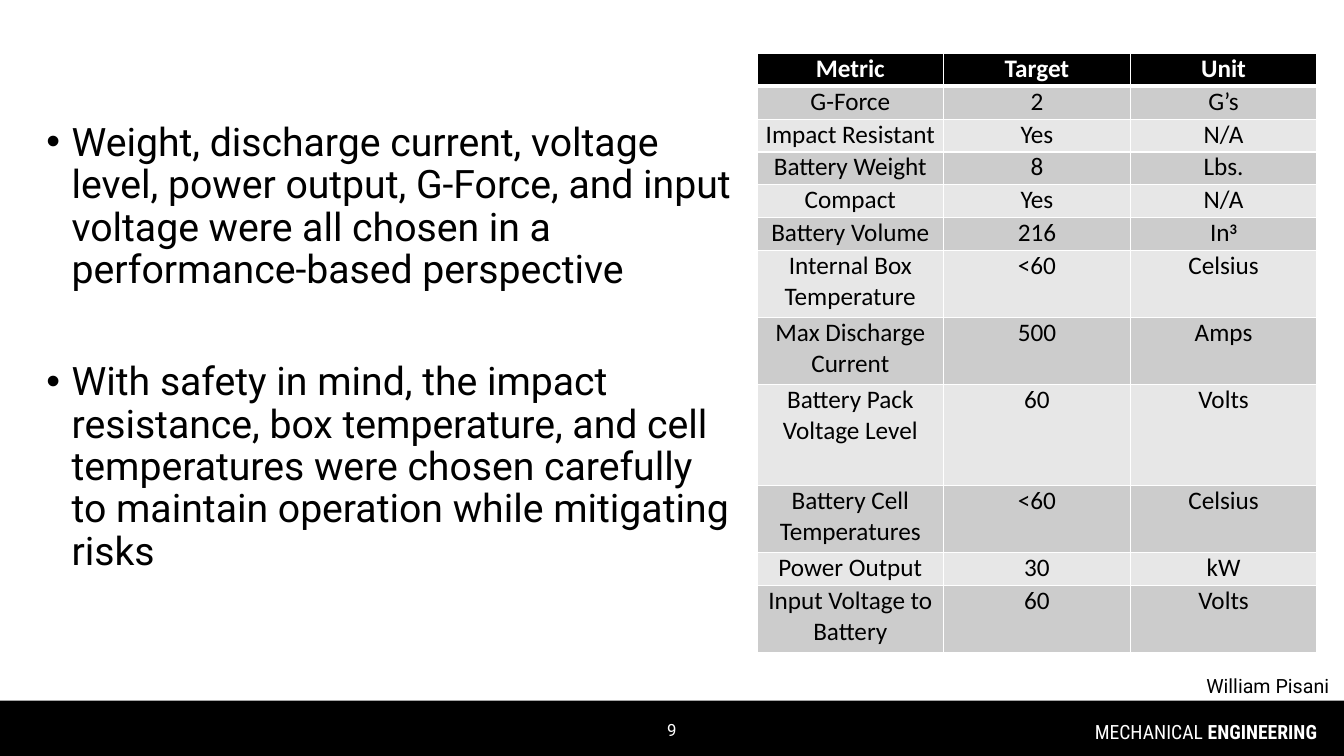
from lxml.etree import SubElement
from pptx import Presentation
from pptx.dml.color import RGBColor
from pptx.enum.shapes import MSO_SHAPE as Shape
from pptx.enum.text import MSO_ANCHOR as Anchor, PP_ALIGN as Align
from pptx.oxml.ns import qn
from pptx.util import Pt

POINTS = [
    "Weight, discharge current, voltage level, power output, G-Force, and input "
    "voltage were all chosen in a performance-based perspective",
    "With safety in mind, the impact resistance, box temperature, and cell temperatures "
    "were chosen carefully to maintain operation while mitigating risks",
]
METRICS = [
    ("Metric", "Target", "Unit", 1),
    ("G-Force", "2", "G’s", 1),
    ("Impact Resistant", "Yes", "N/A", 1),
    ("Battery Weight", "8", "Lbs.", 1),
    ("Compact", "Yes", "N/A", 1),
    ("Battery Volume", "216", "In^3", 1),
    ("Internal Box Temperature", "<60", "Celsius", 2),
    ("Max Discharge Current", "500", "Amps", 2),
    ("Battery Pack Voltage Level", "60", "Volts", 3),
    ("Battery Cell Temperatures", "<60", "Celsius", 2),
    ("Power Output", "30", "kW", 1),
    ("Input Voltage to Battery", "60", "Volts", 2),
]
ROW_HEIGHTS = {1: 23.45, 2: 48, 3: 72}


def color(value):
    """Turn a hex string into a colour."""
    return RGBColor.from_string(value)


def write(paragraph, text, size=18, font="Roboto", ink="000000", bold=False,
          align=None, raised=False):
    """Add a formatted run to a paragraph."""
    run = paragraph.add_run()
    run.text = text
    run.font.size, run.font.name, run.font.bold = Pt(size), font, bold
    run.font.color.rgb = color(ink)
    if align is not None:
        paragraph.alignment = align
    if raised:
        run._r.get_or_add_rPr().set("baseline", "30000")


def place(item, left, top, width, height):
    """Move and size a shape, in points."""
    item.left, item.top, item.width, item.height = map(Pt, (left, top, width, height))


def set_bullet(paragraph, mark=None, indent=0):
    """Give a paragraph a hanging bullet, or none."""
    properties = paragraph._p.get_or_add_pPr()
    properties.set("marL", str(Pt(indent)))
    properties.set("indent", str(-Pt(indent)))
    if mark:
        SubElement(properties, qn("a:buFont"), typeface="Arial")
        SubElement(properties, qn("a:buChar"), char=mark)
    else:
        SubElement(properties, qn("a:buNone"))


def set_border(cell, side, width):
    """Draw one white edge of a cell."""
    edge = SubElement(cell._tc.get_or_add_tcPr(), qn(f"a:ln{side}"), w=str(Pt(width)))
    SubElement(SubElement(edge, qn("a:solidFill")), qn("a:srgbClr"), val="FFFFFF")


def build_rationale(body, left, top, width, height):
    """Fill the body with the reasons for the metrics."""
    place(body, left, top, width, height)
    frame = body.text_frame
    frame.vertical_anchor = Anchor.TOP
    for index, point in enumerate(POINTS):
        paragraph = frame.add_paragraph() if index else frame.paragraphs[0]
        paragraph.line_spacing = 0.9
        paragraph.space_before = Pt(50 if index else 0)
        set_bullet(paragraph, "•", 18)
        write(paragraph, point, size=28)


def build_author(body, left, top, width, height):
    """Fill the author line above the footer."""
    place(body, left, top, width, height)
    frame = body.text_frame
    frame.vertical_anchor = Anchor.MIDDLE
    frame.margin_top = frame.margin_bottom = 0
    frame.margin_right = Pt(10.5)
    author = frame.paragraphs[0]
    author.line_spacing, author.space_before = 0.9, Pt(0)
    set_bullet(author)
    write(author, "William Pisani", size=14, align=Align.RIGHT)


def build_metrics(slide, left, top, width):
    """Draw the table of metrics, targets and units."""
    heights = [ROW_HEIGHTS[row[-1]] for row in METRICS]
    table = slide.shapes.add_table(len(METRICS), 3, Pt(left), Pt(top),
                                   Pt(width), Pt(sum(heights))).table
    for column in table.columns:
        column.width = Pt(width / 3)
    for index, (*entries, _) in enumerate(METRICS):
        table.rows[index].height = Pt(heights[index])
        header = index == 0
        fill = "000000" if header else ("E7E7E7", "CCCCCC")[index % 2]
        for cell, entry in zip(table.rows[index].cells, entries):
            cell.margin_left = cell.margin_right = cell.margin_top = cell.margin_bottom = 0
            for side in "LRTB":
                thick = (header and side == "B") or (index == 1 and side == "T")
                set_border(cell, side, 3 if thick else 1)
            cell.fill.solid()
            cell.fill.fore_color.rgb = color(fill)
            value, _, power = entry.partition("^")
            paragraph = cell.text_frame.paragraphs[0]
            write(paragraph, value, font="Calibri", bold=header, align=Align.CENTER,
                  ink="FFFFFF" if header else "000000")
            if power:
                write(paragraph, power, font="Calibri", bold=True, raised=True)


def add_label(slide, left, top, width, height):
    """Add a middle-anchored text box and return its paragraph."""
    frame = slide.shapes.add_textbox(*map(Pt, (left, top, width, height))).text_frame
    frame.word_wrap = True
    frame.vertical_anchor = Anchor.MIDDLE
    return frame.paragraphs[0]


def build_footer(slide, left, top, width, height):
    """Draw the black band with page number and department."""
    band = slide.shapes.add_shape(Shape.RECTANGLE, *map(Pt, (left, top, width, height)))
    band.shadow.inherit = False
    band.fill.solid()
    band.fill.fore_color.rgb = color("000000")
    band.line.fill.background()
    page = add_label(slide, left + (width - 216) / 2, top + 6.5, 216, 29)
    write(page, "9", size=12, ink="FFFFFF", align=Align.CENTER)
    department = add_label(slide, left + width - 228, top + 9, 216, 26)
    for word, bold in (("MECHANICAL ", False), ("ENGINEERING", True)):
        write(department, word, size=14, font="Roboto Condensed", ink="FFFFFF",
              bold=bold, align=Align.RIGHT)


def main():
    """Build and save the slide."""
    deck = Presentation()
    deck.slide_width, deck.slide_height = Pt(960), Pt(540)
    slide = deck.slides.add_slide(deck.slide_layouts[3])
    title, rationale, author = slide.placeholders
    title._element.getparent().remove(title._element)
    build_footer(slide, 0, 500.4, 960, 39.6)
    build_rationale(rationale, 26, 84, 506, 382)
    build_author(author, 708, 482, 252, 18)
    build_metrics(slide, 540.7, 38.2, 400)
    deck.save("out.pptx")


if __name__ == "__main__":
    main()
